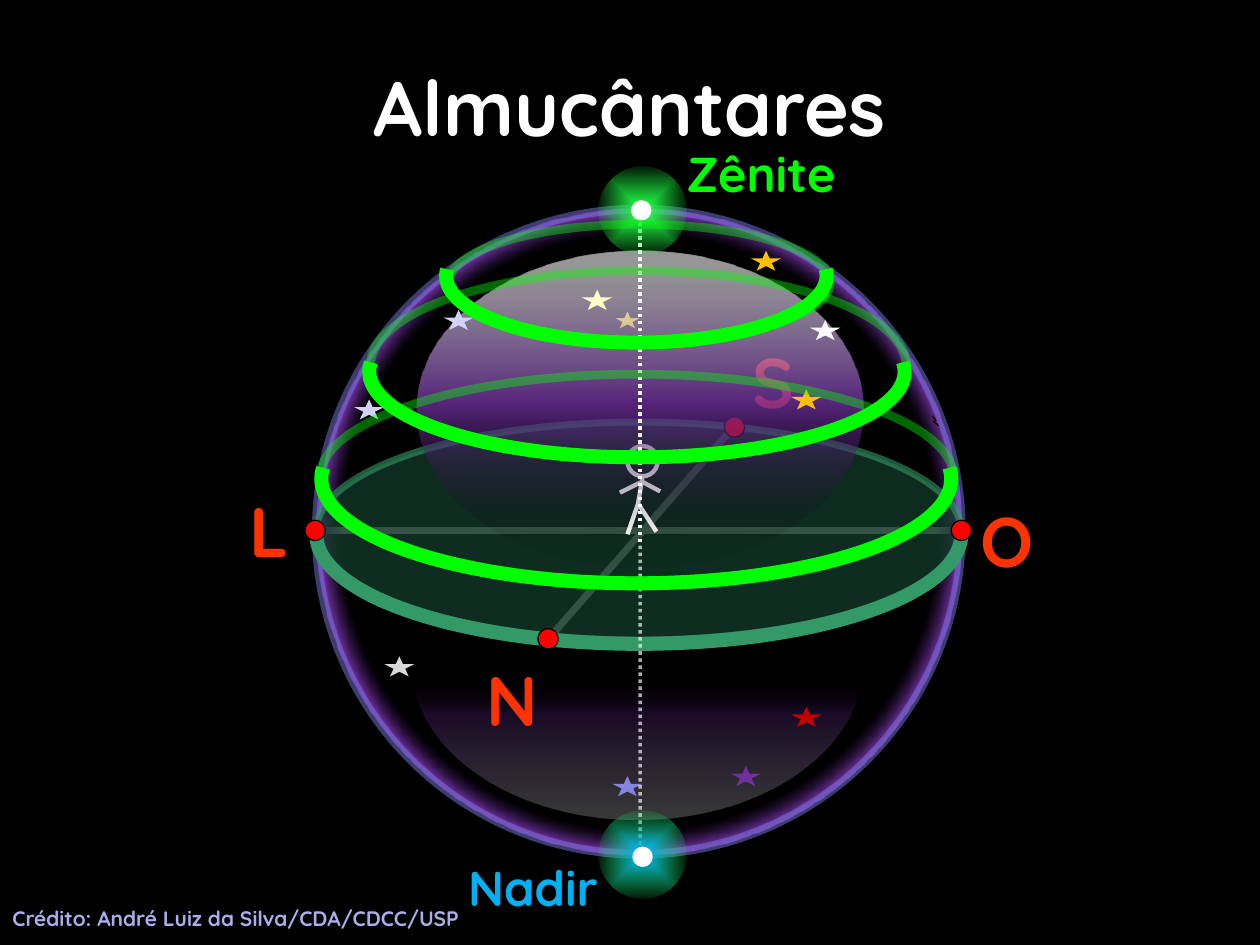
import pptx
import pptx.dml.color
import pptx.enum.dml
import pptx.enum.shapes
import pptx.enum.text
import pptx.oxml
import pptx.oxml.ns
import pptx.util

Inches = pptx.util.Inches
SHAPE = pptx.enum.shapes.MSO_SHAPE
ALIGN = pptx.enum.text.PP_ALIGN
ANCHOR = pptx.enum.text.MSO_ANCHOR
DOTTED = pptx.enum.dml.MSO_LINE.ROUND_DOT

WHITE, BLACK, RED, GREEN = "FFFFFF", "000000", "FF0000", "00FF00"
LETTER, HORIZON, DISC, PURPLE = "FF3300", "339966", "143C2B", "7030A0"
SPIN = 305.7

STARS = [
    (2.81, 3.17, "D2D2F4"), (3.52, 2.46, "D2D2F4"), (6.28, 3.09, "FFC000"),
    (5.96, 1.99, "FFC000"), (6.43, 2.54, WHITE), (4.62, 2.3, "FFFFCC"),
    (5.8, 6.08, PURPLE), (6.28, 5.61, "C00000"), (4.86, 6.16, "8585E0"),
    (3.05, 5.21, "D9D9D9"),
]
LIMBS = [
    (5.1, 3.78, 5.06, 4.02), (5.06, 3.99, 5.21, 4.22), (5.06, 4.01, 4.98, 4.24),
    (5.09, 3.82, 5.24, 3.9), (4.92, 3.91, 5.08, 3.83),
]
CARDINAL_DOTS = [(2.42, 4.13), (5.75, 3.31), (4.27, 4.99), (7.55, 4.13)]
BACK_CIRCLES = [(3.56, 1.78, 3.03, 0.93), (2.54, 2.97, 5.03, 1.64), (2.94, 2.15, 4.25, 1.5)]
FRONT_ARCS = [(2.93, 2.27, 4.25, 1.36), (2.55, 2.97, 5, 1.66), (3.54, 1.66, 3.02, 1.06)]


def color(value):
    return pptx.dml.color.RGBColor.from_string(value)


def set_alpha(sp, parent, alpha):
    if alpha < 100:
        for clr in sp.element.xpath(f"./p:spPr/{parent}a:solidFill/a:srgbClr"):
            clr.append(pptx.oxml.parse_xml(
                f'<a:alpha {pptx.oxml.ns.nsdecls("a")} val="{alpha * 1000}"/>'))


def set_fill(sp, value, alpha=100):
    if value is None:
        sp.fill.background()
        return
    sp.fill.solid()
    sp.fill.fore_color.rgb = color(value)
    set_alpha(sp, "", alpha)


def set_gradient(sp, stops, direction):
    stop_xml = "".join(
        f'<a:gs pos="{pos * 1000}"><a:srgbClr val="{value}">'
        f'<a:alpha val="{alpha * 1000}"/></a:srgbClr></a:gs>'
        for pos, value, alpha in stops)
    if isinstance(direction, str):
        shade = (f'<a:path path="{direction}"><a:fillToRect l="50000" t="50000" '
                 'r="50000" b="50000"/></a:path>')
    else:
        shade = f'<a:lin ang="{direction * 60000}" scaled="0"/>'
    grad = pptx.oxml.parse_xml(
        f'<a:gradFill {pptx.oxml.ns.nsdecls("a")} rotWithShape="1">'
        f'<a:gsLst>{stop_xml}</a:gsLst>{shade}</a:gradFill>')
    sp.fill.background()
    blank = sp.element.spPr.find(pptx.oxml.ns.qn("a:noFill"))
    sp.element.spPr.replace(blank, grad)


def set_line(sp, value, width, alpha=100):
    if value is None:
        sp.line.fill.background()
        return
    sp.line.color.rgb = color(value)
    sp.line.width = pptx.util.Pt(width)
    set_alpha(sp, "a:ln/", alpha)


def add_shape(s, kind, x, y, w, h, fill=None, line=None, width=0.75,
              line_alpha=100, fill_alpha=100, rotation=0):
    sp = s.shapes.add_shape(kind, Inches(x), Inches(y), Inches(w), Inches(h))
    sp.shadow.inherit = False
    sp.rotation = rotation
    set_fill(sp, fill, fill_alpha)
    set_line(sp, line, width, line_alpha)
    return sp


def add_star(s, x, y, fill, line=None):
    add_shape(s, SHAPE.STAR_5_POINT, x, y, 0.24, 0.16, fill, line)


def add_dot(s, x, y, fill, line=None):
    add_shape(s, SHAPE.OVAL, x, y, 0.16, 0.16, fill, line)


def add_glow(s, x, y, center):
    sp = add_shape(s, SHAPE.OVAL, x, y, 0.7, 0.7, rotation=SPIN)
    set_gradient(sp, [(7, center, 100), (77, "21FF46", 2)], "shape")


def add_front_arc(s, x, y, w, h, line, fill=None, fill_alpha=100):
    sp = add_shape(s, SHAPE.ARC, x, y, w, h, fill, line, 8, fill_alpha=fill_alpha)
    for i, degrees in enumerate((358, 182)):
        sp.adjustments[i] = degrees * 0.6


def add_segment(s, x1, y1, x2, y2, width, value=WHITE, alpha=100, dash=None):
    cxn = s.shapes.add_connector(
        pptx.enum.shapes.MSO_CONNECTOR.STRAIGHT,
        Inches(x1), Inches(y1), Inches(x2), Inches(y2))
    set_line(cxn, value, width, alpha)
    if dash:
        cxn.line.dash_style = dash
    cxn.element.spPr.append(
        pptx.oxml.parse_xml(f'<a:effectLst {pptx.oxml.ns.nsdecls("a")}/>'))


def add_text(s, text, x, y, w, h, size, value, align=ALIGN.LEFT, anchor=ANCHOR.TOP):
    tf = s.shapes.add_textbox(Inches(x), Inches(y), Inches(w), Inches(h)).text_frame
    tf.word_wrap = True
    tf.vertical_anchor = anchor
    p = tf.paragraphs[0]
    p.text = text
    p.alignment = align
    p.font.name = "Quicksand"
    p.font.size = pptx.util.Pt(size)
    p.font.bold = True
    p.font.color.rgb = color(value)


def add_letter(s, text, x, y):
    add_text(s, text, x, y, 0.39, 0.77, 40, LETTER)


def add_sphere(s):
    moon = add_shape(s, SHAPE.MOON, 4.44, 4.1, 1.23, 3.58, rotation=270)
    moon.adjustments[0] = 0.875
    set_gradient(moon, [(3, WHITE, 37), (68, PURPLE, 41), (94, BLACK, 0)], 0)
    add_segment(s, 4.31, 5.12, 5.83, 3.38, 4)
    add_segment(s, 2.51, 4.21, 7.62, 4.21, 4)
    sphere = add_shape(s, SHAPE.OVAL, 2.51, 1.66, 5.12, 5.12, None, "7878DE", 5, 50)
    set_gradient(sphere, [(65, BLACK, 40), (70, PURPLE, 100)], "circle")


def add_horizon(s):
    add_letter(s, "L", 1.88, 3.82)
    add_letter(s, "S", 5.87, 2.64)
    add_letter(s, "O", 7.68, 3.9)
    add_shape(s, SHAPE.OVAL, 2.51, 3.35, 5.12, 1.73, DISC, HORIZON, 4, 60, 73)
    add_letter(s, "N", 3.76, 5.16)
    add_segment(s, 7.41, 3.34, 7.45, 3.38, 0.75, BLACK)
    add_front_arc(s, 2.51, 3.37, 5.12, 1.74, HORIZON, DISC, 7)


def add_observer(s):
    add_shape(s, SHAPE.OVAL, 4.98, 3.54, 0.24, 0.24, None, WHITE, 2.5)
    for limb in LIMBS:
        add_segment(s, *limb, 2.5)


def add_poles(s):
    add_segment(s, 5.08, 1.65, 5.08, 4.33, 2, dash=DOTTED)
    add_glow(s, 4.75, 1.32, "21FF46")
    add_dot(s, 5.01, 1.59, WHITE)
    add_text(s, "Zênite", 5.18, 1.09, 1.72, 0.57, 28, GREEN, ALIGN.CENTER)
    add_segment(s, 5.08, 4.33, 5.08, 6.85, 2, alpha=65, dash=DOTTED)
    add_text(s, "Nadir", 3.37, 6.76, 1.72, 0.57, 28, "00B0F0", ALIGN.CENTER)
    add_glow(s, 4.75, 6.43, "00B0F0")
    add_dot(s, 5.02, 6.72, WHITE)


def main():
    prs = pptx.Presentation()
    prs.slide_width, prs.slide_height = Inches(10), Inches(7.5)
    s = prs.slides.add_slide(prs.slide_layouts[6])
    s.background.fill.solid()
    s.background.fill.fore_color.rgb = color(BLACK)

    add_sphere(s)
    add_horizon(s)
    add_star(s, 4.86, 2.46, "FFFF00", BLACK)
    add_observer(s)
    for x, y in CARDINAL_DOTS:
        add_dot(s, x, y, RED, BLACK)
    dome = add_shape(s, SHAPE.OVAL, 3.31, 1.99, 3.54, 2.52)
    set_gradient(dome, [(6, WHITE, 58), (48, PURPLE, 77), (91, BLACK, 2)], 90)
    for star in STARS:
        add_star(s, *star)
    add_poles(s)
    add_text(s, "Almucântares", 0.75, 0.21, 8.5, 1.25, 44, WHITE, ALIGN.CENTER, ANCHOR.MIDDLE)
    for circle in BACK_CIRCLES:
        add_shape(s, SHAPE.OVAL, *circle, None, GREEN, 5, 40)
    add_segment(s, 7.4, 3.3, 7.43, 3.34, 0.75, BLACK)
    for arc in FRONT_ARCS:
        add_front_arc(s, *arc, GREEN)
    add_text(s, "Crédito: André Luiz da Silva/CDA/CDCC/USP", 0, 7.14, 10.28, 0.3, 12, "ADADEB")
    prs.save("out.pptx")


if __name__ == "__main__":
    main()
